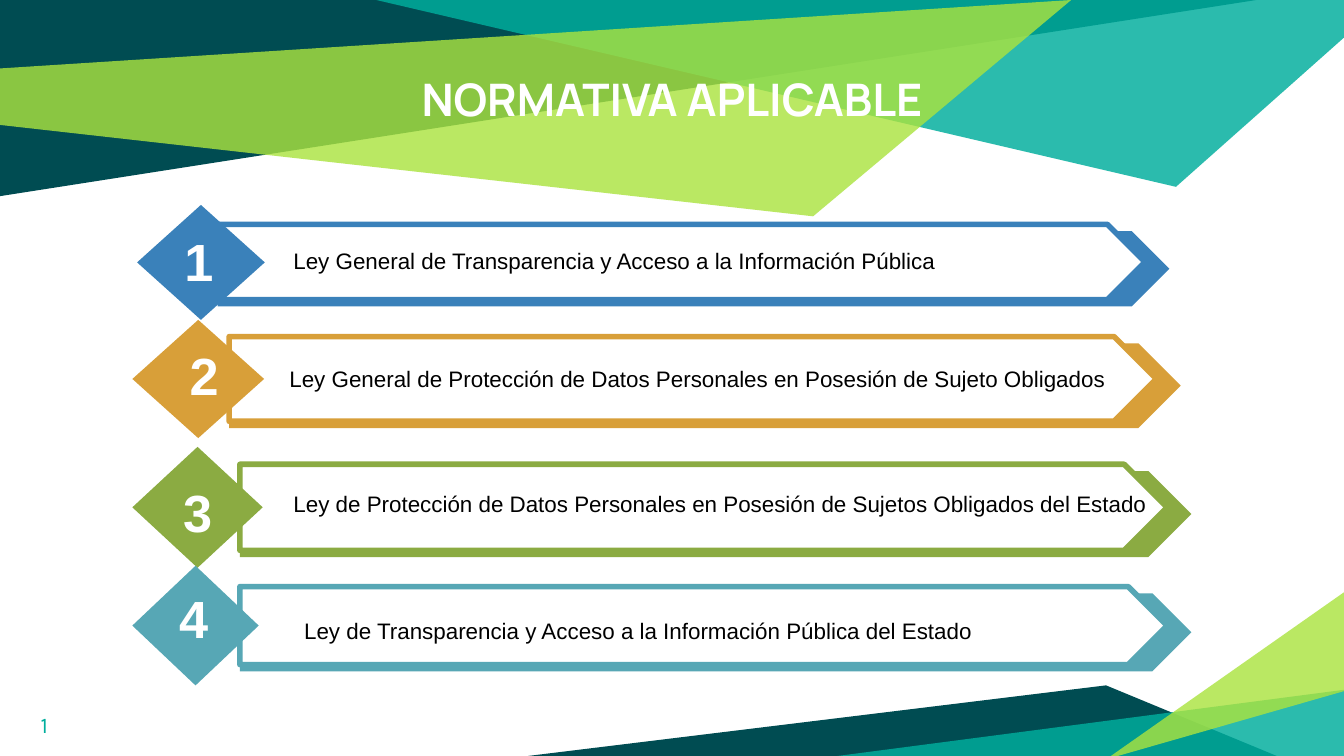
from pptx import Presentation
from pptx.dml.color import RGBColor
from pptx.enum.shapes import MSO_SHAPE
from pptx.enum.text import MSO_ANCHOR, PP_ALIGN
from pptx.oxml.ns import qn
from pptx.util import Inches, Pt
from lxml.etree import SubElement

HUES = {
    "dark": "004C52", "teal": "00AE9D", "lime": "ABE33F",
    "white": "FFFFFF", "black": "000000",
    "blue": "3A81BA", "gold": "D89F39", "green": "8BAB42", "aqua": "57A7B5",
}

deck = Presentation()
deck.slide_width = Inches(10)
deck.slide_height = deck.slide_width * 9 // 16
cell = deck.slide_width // 100  # grid of 100 columns by 56.25 rows
slide = deck.slides.add_slide(deck.slide_layouts[5])
shapes = slide.shapes


def paint(shape, hue, edge=None):
    shape.shadow.inherit = False
    shape.fill.solid()
    shape.fill.fore_color.rgb = RGBColor.from_string(HUES[hue])
    if edge:
        shape.line.color.rgb = RGBColor.from_string(HUES[edge])
        shape.line.width = Pt(3)
    else:
        shape.line.fill.background()


def write(box, text, size, font, hue, bold=False, align=PP_ALIGN.CENTER,
          anchor=MSO_ANCHOR.TOP, pad=None):
    frame = box.text_frame
    frame.text = text
    frame.word_wrap = True
    frame.vertical_anchor = anchor
    if pad:
        frame.margin_left = frame.margin_right = pad
        frame.margin_top = frame.margin_bottom = pad
    line = frame.paragraphs[0]
    line.alignment = align
    face = line.runs[0].font
    face.size, face.name, face.bold = Pt(size), font, bold
    face.color.rgb = RGBColor.from_string(HUES[hue])


# Banner and footer facets: colour, opacity in percent, corners
facets = [
    ("dark", 100, [(0, 0), (0, 14.6), (93.5, 0)]),
    ("teal", 83, [(28, 0), (87.5, 13.9), (100, 2.8), (100, 0)]),
    ("lime", 81, [(-0.1, 5.1), (0, 9.3), (60.5, 16.1), (79.7, 0)]),
    ("dark", 100, [(39.3, 56.25), (95, 56.25), (82.3, 51)]),
    ("teal", 83, [(100.2, 51.3), (100.2, 56.5), (60.4, 56.5)]),
    ("lime", 81, [(100.1, 51.4), (100.1, 44), (82.3, 56.5)]),
]
for hue, alpha, dots in facets:
    first, *rest = [(x * cell, y * cell) for x, y in dots]
    pen = shapes.build_freeform(*first)
    pen.add_line_segments(rest, close=True)
    facet = pen.convert_to_shape()
    paint(facet, hue)
    if alpha < 100:
        tint = facet._element.spPr.find(".//" + qn("a:srgbClr"))
        SubElement(tint, qn("a:alpha")).set("val", str(alpha * 1000))

# Title, moved in front of the banner
title = shapes.title
title.left, title.top = int(9.7 * cell), int(4.35 * cell)
title.width, title.height = int(80.6 * cell), int(9.4 * cell)
write(title, "NORMATIVA APLICABLE", 24, "Manrope", "white", True, pad=cell)
tree = title._element.getparent()
tree.remove(title._element)
tree.append(title._element)

# Page number
page = shapes.add_textbox(*[int(n * cell) for n in (0.3, 51.95, 6, 4.3)])
write(page, "1", 12, "Karla", "teal", pad=cell)

# Laws: colour, text, bar (left, top, height), diamond box,
# text (left, top, width), number (left, top, width)
laws = [
    ("blue", "Ley General de Transparencia y Acceso a la Información Pública ",
     (16.2, 16.7, 5.6), (10.2, 15.25, 9.5, 8.55),
     (20.85, 17.9, 52), (12.2, 16.55, 5.2)),
    ("gold", "Ley General de Protección de Datos Personales en Posesión "
     "de Sujeto Obligados",
     (17.05, 25.05, 6.3), (9.85, 23.8, 9.8, 8.8),
     (20.55, 26.7, 63.3), (13, 25.05, 4.4)),
    ("green", "Ley de Protección de Datos Personales en Posesión "
     "de Sujetos Obligados del Estado",
     (17.85, 34.55, 6.4), (9.85, 33.25, 9.7, 9),
     (20.85, 36, 66.1), (12.5, 35.2, 4.4)),
    ("aqua", "Ley de Transparencia y Acceso a la Información Pública "
     "del Estado",
     (17.85, 43.65, 5.8), (9.85, 42.1, 9.4, 8.9),
     (21.65, 45.45, 52), (12.2, 43.1, 4.4)),
]
for count, (hue, law, bar, gem, note, mark) in enumerate(laws, 1):
    left, top, tall = bar
    parts = [
        (MSO_SHAPE.PENTAGON, (left, top + 0.5, 70.8, tall), hue, None),
        (MSO_SHAPE.PENTAGON, (left, top, 69, tall), "white", hue),
        (MSO_SHAPE.DIAMOND, gem, hue, None),
    ]
    for kind, area, fill, edge in parts:
        paint(shapes.add_shape(kind, *[int(n * cell) for n in area]),
              fill, edge)
    side = PP_ALIGN.LEFT if hue == "green" else PP_ALIGN.JUSTIFY
    box = shapes.add_textbox(*[int(n * cell) for n in (*note, 3)])
    write(box, law, 12, "Arial", "black", align=side)
    box = shapes.add_textbox(*[int(n * cell) for n in (*mark, 5.7)])
    write(box, f"{count} ", 28, "Arial", "white", True,
          anchor=MSO_ANCHOR.MIDDLE)

deck.save("out.pptx")
